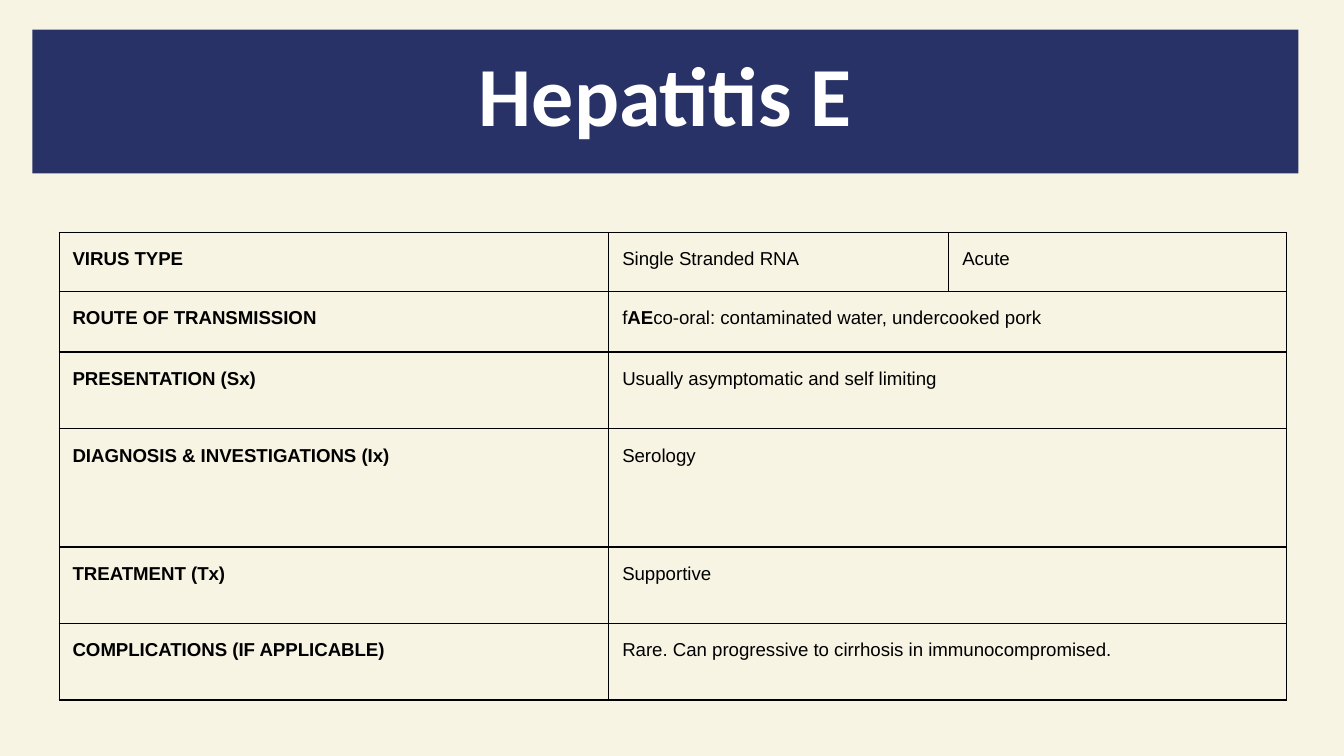
"""Build a one-slide summary table of hepatitis E."""
from dataclasses import dataclass

from lxml import etree
from pptx import Presentation
from pptx.dml.color import RGBColor
from pptx.enum.shapes import MSO_SHAPE
from pptx.enum.text import MSO_ANCHOR, PP_ALIGN
from pptx.oxml.ns import qn
from pptx.util import Inches, Pt

RECT = MSO_SHAPE.RECTANGLE
TOP = MSO_ANCHOR.TOP
CENTER = PP_ALIGN.CENTER

TITLE = "Hepatitis E"
ROWS = [
    ("VIRUS TYPE", [["Single Stranded RNA"], ["Acute"]], 0.44),
    ("ROUTE OF TRANSMISSION",
     [["f", ("AE", True), "co-oral: contaminated water, undercooked pork"]], 0.45),
    ("PRESENTATION (Sx)", [["Usually asymptomatic and self limiting"]], 0.57),
    ("DIAGNOSIS & INVESTIGATIONS (Ix)", [["Serology"]], 0.88),
    ("TREATMENT (Tx)", [["Supportive"]], 0.57),
    ("COMPLICATIONS (IF APPLICABLE)",
     [["Rare. Can progressive to cirrhosis in immunocompromised."]], 0.57),
]
COLS = [4.09, 2.53, 2.51]
SLIDE = (10, 10 * 9 / 16)
BANNER = (0.24, 0.22, 9.42, 1.07)
TABLE_LEFT, TABLE_TOP = 0.44, 1.73


@dataclass(frozen=True)
class Theme:
    """Hold the colours, fonts and sizes."""
    page: str = "F7F4E4"
    banner: str = "293266"
    title: str = "FFFFFF"
    ink: str = "000000"
    title_font: str = "Calibri"
    body_font: str = "Arial"
    title_size: float = 45
    body_size: float = 10
    border: float = 0.75
    spacing: float = 1.15
    inset: float = 0.1


T = Theme()


def set_insets(box):
    """Give a cell or text frame equal insets."""
    box.margin_left = box.margin_right = Inches(T.inset)
    box.margin_top = box.margin_bottom = Inches(T.inset)


def add_run(p, text, font, size, color, bold):
    """Append one styled run."""
    r = p.add_run()
    r.text = text
    r.font.name, r.font.size, r.font.bold = font, Pt(size), bold
    r.font.color.rgb = RGBColor.from_string(color)


def set_borders(cell):
    """Draw a thin line on all four cell sides."""
    tcPr = cell._tc.get_or_add_tcPr()
    for side in ("a:lnL", "a:lnR", "a:lnT", "a:lnB"):
        ln = etree.SubElement(tcPr, qn(side), w=str(Pt(T.border)))
        fill = etree.SubElement(ln, qn("a:solidFill"))
        etree.SubElement(fill, qn("a:srgbClr"), val=T.ink)


def fill_cell(cell, runs):
    """Write a list of plain strings or (text, bold) pairs."""
    p = cell.text_frame.paragraphs[0]
    p.line_spacing = T.spacing
    for item in runs:
        text, bold = item if isinstance(item, tuple) else (item, False)
        add_run(p, text, T.body_font, T.body_size, T.ink, bold)


def add_banner(slide):
    """Add the title bar."""
    sp = slide.shapes.add_shape(RECT, *map(Inches, BANNER))
    sp.shadow.inherit = False
    sp.fill.solid()
    sp.fill.fore_color.rgb = RGBColor.from_string(T.banner)
    sp.line.fill.background()
    tf = sp.text_frame
    tf.word_wrap = True
    tf.vertical_anchor = TOP
    set_insets(tf)
    p = tf.paragraphs[0]
    p.alignment = CENTER
    add_run(p, TITLE, T.title_font, T.title_size, T.title, True)


def add_summary(slide):
    """Add the table, merging the last columns where a row has one value."""
    heights = [row[2] for row in ROWS]
    box = (TABLE_LEFT, TABLE_TOP, sum(COLS), sum(heights))
    table = slide.shapes.add_table(len(ROWS), len(COLS), *map(Inches, box)).table
    table.first_row = table.horz_banding = False
    for col, width in zip(table.columns, COLS):
        col.width = Inches(width)
    for row, height in zip(table.rows, heights):
        row.height = Inches(height)
    for cell in table.iter_cells():
        set_insets(cell)
        set_borders(cell)
        cell.fill.background()
    for i, (label, values, _) in enumerate(ROWS):
        if len(values) == 1:
            table.cell(i, 1).merge(table.cell(i, len(COLS) - 1))
        for j, runs in enumerate([[(label, True)], *values]):
            fill_cell(table.cell(i, j), runs)


def main():
    """Assemble and save the slide."""
    prs = Presentation()
    prs.slide_width, prs.slide_height = map(Inches, SLIDE)
    s = prs.slides.add_slide(prs.slide_layouts[6])
    s.background.fill.solid()
    s.background.fill.fore_color.rgb = RGBColor.from_string(T.page)
    add_banner(s)
    add_summary(s)
    prs.save("out.pptx")


if __name__ == "__main__":
    main()
